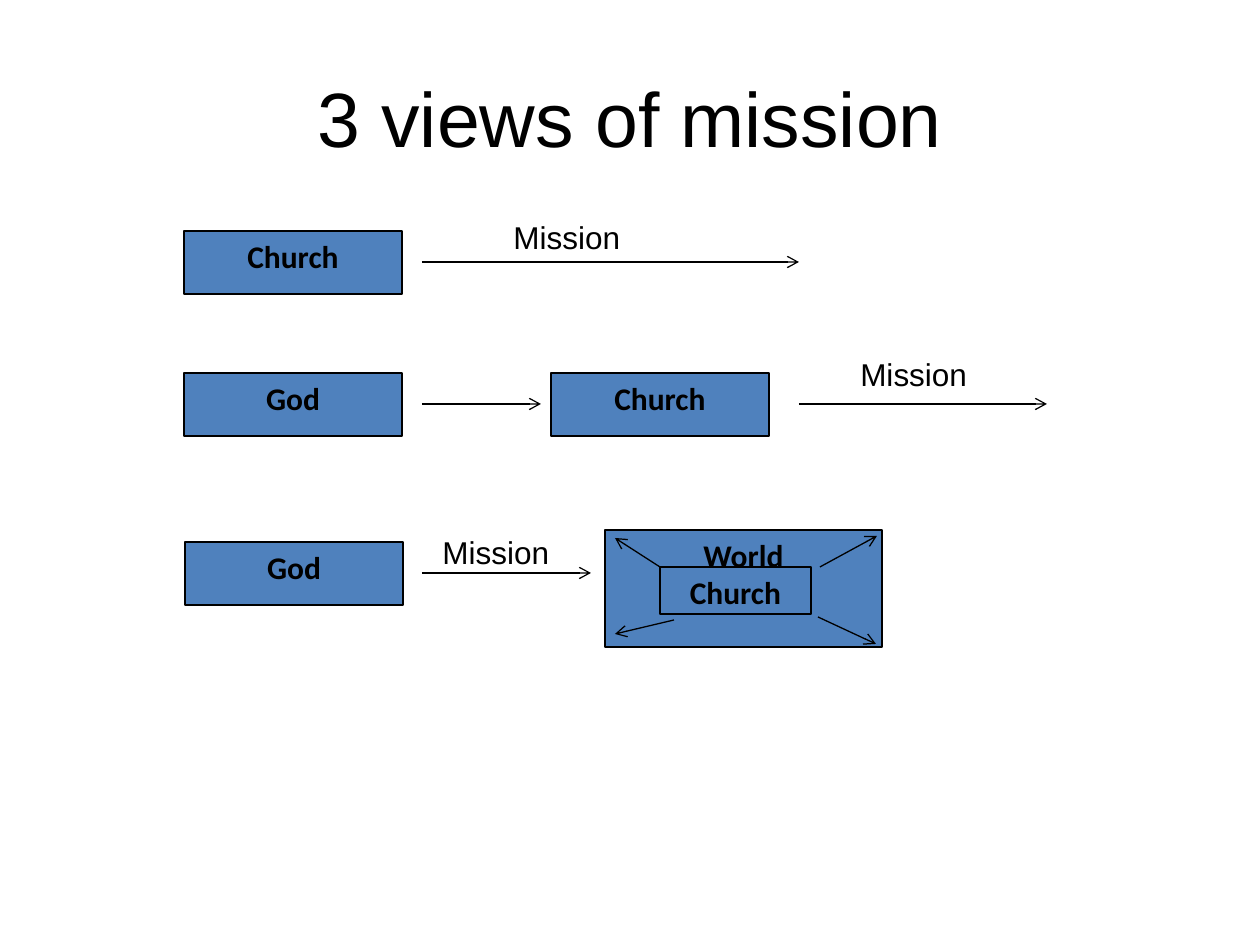
from pptx import Presentation
from pptx.dml.color import RGBColor
from pptx.enum.shapes import MSO_CONNECTOR as CONN, MSO_SHAPE as SHAPE
from pptx.enum.text import MSO_ANCHOR as ANCHOR, MSO_AUTO_SIZE as AUTO, PP_ALIGN as ALIGN
from pptx.oxml.ns import qn
from pptx.util import Pt
from lxml.etree import SubElement

PX = 914400 // 126
BLACK, BLUE = "000000", "4F81BD"

TITLE = ("3 views of mission", (63, 38, 1134, 157))
BOX_SIZE = (218, 63)
BOXES = [  # text, left, top, size
    ("Church", 184, 231, BOX_SIZE),
    ("God", 184, 373, BOX_SIZE),
    ("God", 185, 542, BOX_SIZE),
    ("Church", 551, 373, BOX_SIZE),
    ("World", 605, 530, (277, 117)),
    ("Church", 660, 567, (151, 47)),
]
MISSION_LABELS = [  # left, top, width
    (501, 212, 208),
    (848, 349, 149),
    (430, 527, 139),
]
FLOW_ARROWS = [  # y, start x, end x
    (262, 422, 799),
    (404, 422, 541),
    (404, 799, 1047),
    (573, 422, 591),
]
CHURCH_TO_WORLD = [  # start x, start y, end x, end y
    (820, 567, 877, 536),
    (818, 617, 876, 644),
    (674, 620, 615, 634),
    (660, 567, 615, 538),
]


def px(*lengths):
    return [n * PX for n in lengths]


def rgb(color):
    return RGBColor.from_string(color)


def write(tf, text, size, font, align, bold=False):
    p = tf.paragraphs[0]
    p.alignment = align
    r = p.add_run()
    r.text = text
    r.font.size, r.font.name, r.font.bold = Pt(size), font, bold
    r.font.color.rgb = rgb(BLACK)


def outline(line):
    line.color.rgb = rgb(BLACK)
    line.width = Pt(0.75)


def add_box(slide, text, left, top, size):
    sp = slide.shapes.add_shape(SHAPE.RECTANGLE, *px(left, top, *size))
    sp.shadow.inherit = False
    sp.fill.solid()
    sp.fill.fore_color.rgb = rgb(BLUE)
    outline(sp.line)
    sp.text_frame.vertical_anchor = ANCHOR.TOP
    write(sp.text_frame, text, 18, "Calibri", ALIGN.CENTER, bold=True)


def add_arrow(slide, x1, y1, x2, y2):
    line = slide.shapes.add_connector(CONN.STRAIGHT, *px(x1, y1, x2, y2))
    outline(line.line)
    SubElement(line.line._get_or_add_ln(), qn("a:tailEnd"), type="arrow")
    SubElement(line._element.spPr, qn("a:effectLst"))


def add_label(slide, text, left, top, width):
    tf = slide.shapes.add_textbox(*px(left, top, width, 51)).text_frame
    tf.word_wrap = True
    tf.auto_size = AUTO.SHAPE_TO_FIT_TEXT
    write(tf, text, 18, "Arial", ALIGN.LEFT)


def main():
    prs = Presentation()
    prs.slide_width, prs.slide_height = px(1260, 945)
    slide = prs.slides.add_slide(prs.slide_layouts[5])

    text, place = TITLE
    title = slide.shapes.title
    title.left, title.top, title.width, title.height = px(*place)
    title.text_frame.vertical_anchor = ANCHOR.MIDDLE
    write(title.text_frame, text, 44, "Arial", ALIGN.CENTER)

    for box in BOXES:
        add_box(slide, *box)
    for y, start, end in FLOW_ARROWS:
        add_arrow(slide, start, y, end, y)
    for arrow in CHURCH_TO_WORLD:
        add_arrow(slide, *arrow)
    for label in MISSION_LABELS:
        add_label(slide, "Mission", *label)

    prs.save("out.pptx")


if __name__ == "__main__":
    main()
